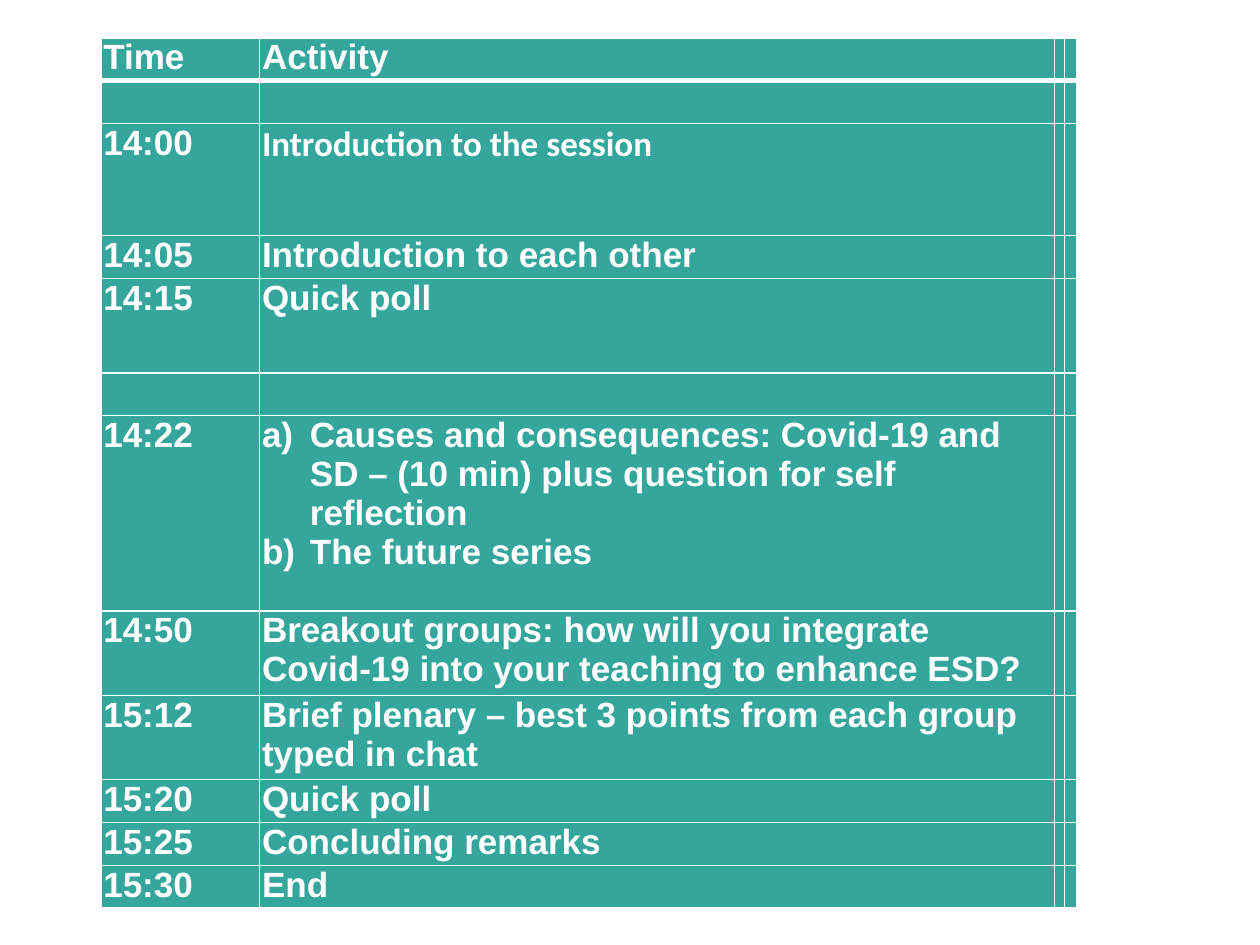
from lxml import etree
from pptx import Presentation
from pptx.dml.color import RGBColor
from pptx.oxml.ns import qn
from pptx.util import Inches, Pt

TEAL, WHITE = "34A69C", "FFFFFF"
BLANK_LAYOUT = 6
COLUMN_WIDTHS = [1.26, 6.31, 0.07, 0.1]
LINE_ROW = 0.34

# Row height, time, activity lines
SCHEDULE = [
    (LINE_ROW, "Time", ["Activity"]),
    (LINE_ROW, "", []),
    (0.89, "14:00", ["Introduction to the session"]),
    (LINE_ROW, "14:05", ["Introduction to each other"]),
    (0.75, "14:15", ["Quick poll"]),
    (LINE_ROW, "", []),
    (1.55, "14:22", [
        "Causes and consequences: Covid-19 and SD – (10 min) plus question for self reflection",
        "The future series",
    ]),
    (0.67, "14:50", ["Breakout groups: how will you integrate Covid-19 into your teaching to enhance ESD?"]),
    (0.67, "15:12", ["Brief plenary – best 3 points from each group typed in chat"]),
    (LINE_ROW, "15:20", ["Quick poll"]),
    (LINE_ROW, "15:25", ["Concluding remarks"]),
    (LINE_ROW, "15:30", ["End"]),
]
CALIBRI_ROW = 2


def color(value):
    return RGBColor.from_string(value)


class AgendaPage:
    font_name = "Arial"
    font_size = 20

    def __init__(self, deck):
        self.page = deck.slides.add_slide(deck.slide_layouts[BLANK_LAYOUT])

    def add_grid(self, left, top, widths, heights):
        frame = self.page.shapes.add_table(
            len(heights), len(widths), Inches(left), Inches(top),
            Inches(sum(widths)), Inches(sum(heights)))
        table = frame.table
        table.horz_banding = False
        for column, width in zip(table.columns, widths):
            column.width = Inches(width)
        for row, height in zip(table.rows, heights):
            row.height = Inches(height)
        return table

    def style_cell(self, cell, top_width=1, bottom_width=1):
        cell.margin_left = cell.margin_right = Inches(0.02)
        cell.margin_top = cell.margin_bottom = 0
        sides = {"a:lnL": 1, "a:lnR": 1, "a:lnT": top_width, "a:lnB": bottom_width}
        properties = cell._tc.get_or_add_tcPr()
        for tag, width in sides.items():
            line = etree.SubElement(properties, qn(tag), w=str(Pt(width)))
            fill = etree.SubElement(line, qn("a:solidFill"))
            etree.SubElement(fill, qn("a:srgbClr"), val=WHITE)
        cell.fill.solid()
        cell.fill.fore_color.rgb = color(TEAL)

    def fill_text(self, cell, lines, font_name=None):
        cell.text_frame.text = "\n".join(lines)
        for paragraph in cell.text_frame.paragraphs:
            if len(lines) > 1:
                self.add_letter(paragraph)
            for span in paragraph.runs:
                span.font.name = font_name or self.font_name
                span.font.size = Pt(self.font_size)
                span.font.bold = True
                span.font.color.rgb = color(WHITE)

    def add_letter(self, paragraph):
        properties = paragraph._p.get_or_add_pPr()
        properties.set("marL", str(Inches(0.38)))
        properties.set("indent", str(Inches(-0.38)))
        etree.SubElement(properties, qn("a:buFont"), typeface=self.font_name)
        etree.SubElement(properties, qn("a:buAutoNum"), type="alphaLcParenR")


def main():
    deck = Presentation()
    deck.slide_width, deck.slide_height = Inches(10), Inches(7.5)
    agenda = AgendaPage(deck)

    # Agenda grid, with a heavier rule below the header
    table = agenda.add_grid(0.8, 0.3, COLUMN_WIDTHS, [entry[0] for entry in SCHEDULE])
    for index, row in enumerate(table.rows):
        for cell in row.cells:
            agenda.style_cell(cell, top_width=3 if index == 1 else 1,
                              bottom_width=3 if index == 0 else 1)

    # Times and activities
    for index, (_, time, activities) in enumerate(SCHEDULE):
        if time:
            agenda.fill_text(table.cell(index, 0), [time])
            agenda.fill_text(table.cell(index, 1), activities,
                             "Calibri" if index == CALIBRI_ROW else None)

    deck.save("out.pptx")


if __name__ == "__main__":
    main()
